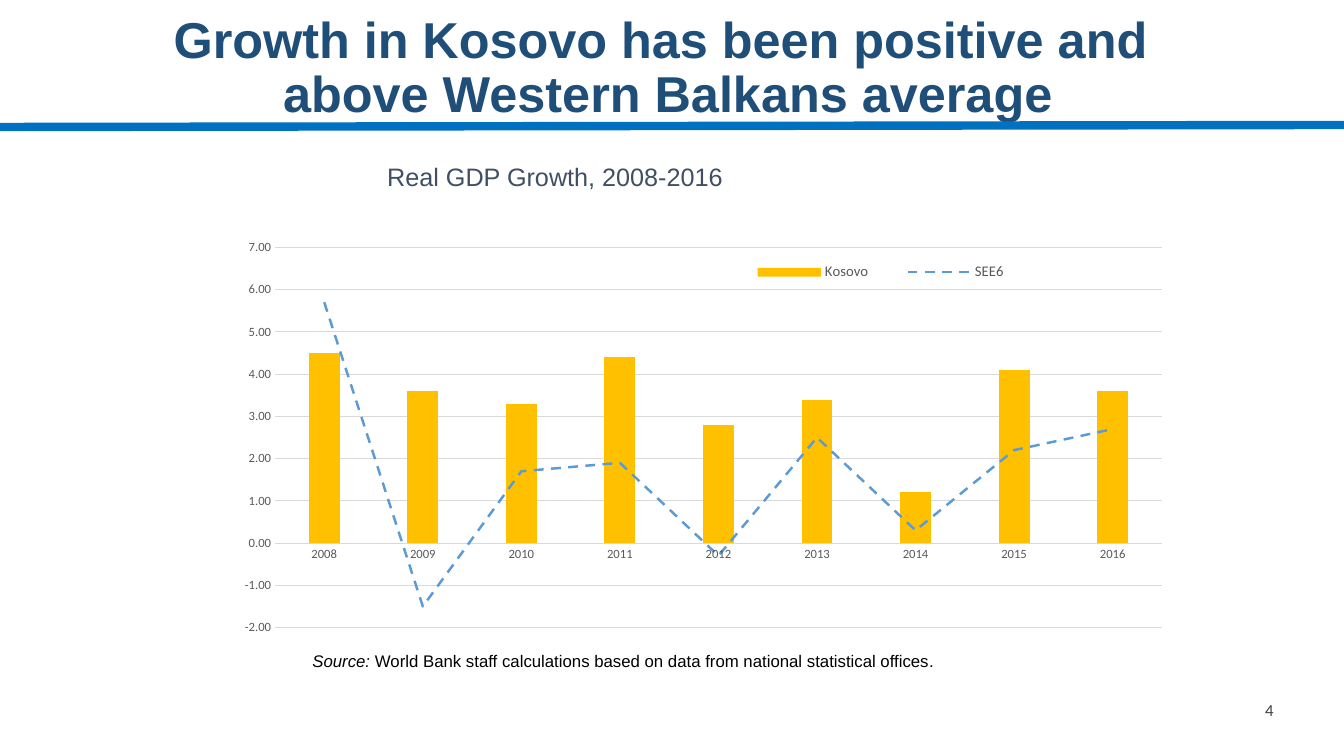
"""Build the slide on real GDP growth in Kosovo."""
from dataclasses import dataclass
from typing import Any

from lxml import etree
from pptx import Presentation, util as u
from pptx.chart import data
from pptx.dml import color
from pptx.enum import chart as ch, dml, shapes, text
from pptx.oxml import ns, parse_xml

HUES = {"title": "1F4E79", "head": "404F64", "rule": "0070C0", "ink": "000000",
        "page": "404040", "label": "595959", "grid": "D9D9D9",
        "bar": "FFC000", "line": "5B9BD5"}
YEARS = [str(year) for year in range(2008, 2017)]
KOSOVO = [4.5, 3.6, 3.3, 4.4, 2.8, 3.4, 1.2, 4.1, 3.6]
SEE6 = [5.7, -1.5, 1.7, 1.9, -0.3, 2.5, 0.3, 2.2, 2.7]
ALIGN = text.PP_ALIGN


@dataclass
class Run:
    """A stretch of text, slanted or upright."""
    words: str
    slant: bool = False


@dataclass
class Label:
    """A text box with its place and format."""
    box: tuple[float, float, float, float]
    runs: list[Run]
    size: float
    hue: str
    align: Any = ALIGN.LEFT
    font: str = "Arial"
    anchor: Any = text.MSO_ANCHOR.TOP


LABELS = [
    Label((1.64, 1.55, 7.73, 0.4), [Run("Real GDP Growth, 2008-2016")],
          18, "head", ALIGN.CENTER),
    Label((3, 6.41, 6.37, 0.3),
          [Run("Source: ", True),
           Run("World Bank staff calculations based on data from national statistical offices"),
           Run(".", True)], 12, "ink"),
    Label((9.73, 6.84, 3, 0.4), [Run("4")], 12, "page", ALIGN.RIGHT, "Calibri",
          text.MSO_ANCHOR.MIDDLE),
]


def put(item: Any, values: dict[str, Any]) -> None:
    """Set each named value on the item."""
    for name, value in values.items():
        setattr(item, name, value)


def tint(hue: str) -> color.RGBColor:
    """Look up a colour by name."""
    return color.RGBColor.from_string(HUES[hue])


def style(font: Any, size: float, hue: str, name: str = "Calibri", **more: bool) -> None:
    """Format a font."""
    put(font, {"size": u.Pt(size), "name": name, **more})
    font.color.rgb = tint(hue)


def stroke(line: Any, hue: str, width: float) -> None:
    """Format a line."""
    line.color.rgb = tint(hue)
    line.width = u.Pt(width)


def head(slide: Any) -> None:
    """Fill the title placeholder."""
    title = slide.shapes.title
    sides = ("left", "top", "width", "height")
    put(title, {side: u.Inches(v) for side, v in zip(sides, (0.28, -0.04, 12.69, 1.45))})
    frame = title.text_frame
    frame.text = "Growth in Kosovo has been positive and \vabove Western Balkans average"
    put(frame, {"word_wrap": True, "auto_size": text.MSO_AUTO_SIZE.NONE,
                "vertical_anchor": text.MSO_ANCHOR.MIDDLE})
    para = frame.paragraphs[0]
    put(para, {"alignment": ALIGN.CENTER, "line_spacing": 0.9})
    for run in para.runs:
        style(run.font, 36, "title", "Arial", bold=True)


def write(slide: Any, label: Label) -> None:
    """Draw one label."""
    frame = slide.shapes.add_textbox(*map(u.Inches, label.box)).text_frame
    put(frame, {"word_wrap": True, "vertical_anchor": label.anchor})
    para = frame.paragraphs[0]
    para.alignment = label.align
    for part in label.runs:
        run = para.add_run()
        run.text = part.words
        style(run.font, label.size, label.hue, label.font, italic=part.slant)


def rule(slide: Any) -> None:
    """Draw the rule under the title."""
    ends = map(u.Inches, (0, 1.26, 13.33, 1.24))
    line = slide.shapes.add_connector(shapes.MSO_CONNECTOR.STRAIGHT, *ends)
    stroke(line.line, "rule", 6)
    etree.SubElement(line.element.spPr, ns.qn("a:effectLst"))


def place(node: Any, spot: int, box: tuple[float, ...], inner: bool = False) -> None:
    """Give a chart part a fixed layout."""
    for old in node.findall(ns.qn("c:layout")):
        node.remove(old)
    target = '<c:layoutTarget val="inner"/>' if inner else ""
    modes = "".join(f'<c:{side}Mode val="edge"/>' for side in "xy")
    sizes = "".join(f'<c:{side} val="{v}"/>' for side, v in zip("xywh", box))
    node.insert(spot, parse_xml(
        f'<c:layout {ns.nsdecls("c")}><c:manualLayout>{target}{modes}{sizes}'
        '</c:manualLayout></c:layout>'))


def split(chart: Any) -> None:
    """Move the second series from the bars to a line plot."""
    bars = chart.element.find(".//" + ns.qn("c:barChart"))
    ser = bars.findall(ns.qn("c:ser"))[1]
    for flag in ser.findall(ns.qn("c:invertIfNegative")):
        ser.remove(flag)
    axes = "".join(f'<c:axId val="{axis.get("val")}"/>'
                   for axis in bars.findall(ns.qn("c:axId")))
    plot = parse_xml(
        f'<c:lineChart {ns.nsdecls("c")}><c:grouping val="standard"/>'
        f'<c:varyColors val="0"/><c:marker val="1"/>{axes}</c:lineChart>')
    plot.insert(2, ser)
    bars.addnext(plot)


def graph(slide: Any) -> None:
    """Draw the chart of bars and a dashed line."""
    table = data.CategoryChartData(number_format="#,##0.00")
    table.categories = YEARS
    for name, values in (("Kosovo", KOSOVO), ("SEE6", SEE6)):
        table.add_series(name, values)
    box = map(u.Inches, (2.16, 2.25, 9.46, 4.1))
    chart = slide.shapes.add_chart(ch.XL_CHART_TYPE.COLUMN_CLUSTERED, *box, table).chart
    split(chart)
    put(chart, {"has_title": False, "has_legend": True})
    style(chart.font, 10, "ink")
    bars, lines = chart.plots
    put(bars, {"gap_width": 219, "overlap": -27, "vary_by_categories": False})
    fill = bars.series[0].format.fill
    fill.solid()
    fill.fore_color.rgb = tint("bar")
    trend = lines.series[0]
    trend.smooth = False
    trend.marker.style = ch.XL_MARKER_STYLE.NONE
    stroke(trend.format.line, "line", 1.75)
    trend.format.line.dash_style = dml.MSO_LINE.DASH
    years, rates = chart.category_axis, chart.value_axis
    for axis in (years, rates):
        put(axis, {"major_tick_mark": ch.XL_TICK_MARK.NONE,
                   "minor_tick_mark": ch.XL_TICK_MARK.NONE})
        style(axis.tick_labels.font, 9, "label")
    stroke(years.format.line, "grid", 0.75)
    put(rates, {"minimum_scale": -2, "maximum_scale": 7, "major_unit": 1,
                "has_major_gridlines": True})
    put(rates.tick_labels, {"number_format": "#,##0.00", "number_format_is_linked": False})
    rates.format.line.fill.background()
    stroke(rates.major_gridlines.format.line, "grid", 0.75)
    put(chart.legend, {"position": ch.XL_LEGEND_POSITION.BOTTOM, "include_in_layout": False})
    style(chart.legend.font, 10.5, "label")
    root = chart.element
    place(root.find(".//" + ns.qn("c:plotArea")), 0, (0.06, 0.05, 0.93, 0.92), True)
    place(root.find(".//" + ns.qn("c:legend")), 1, (0.53, 0.07, 0.33, 0.08))


def main() -> None:
    """Build and save the deck."""
    deck = Presentation()
    put(deck, {"slide_width": u.Inches(13.33), "slide_height": u.Inches(7.5)})
    slide = deck.slides.add_slide(deck.slide_layouts[5])
    head(slide)
    rule(slide)
    for label in LABELS:
        write(slide, label)
    graph(slide)
    deck.save("out.pptx")


if __name__ == "__main__":
    main()
